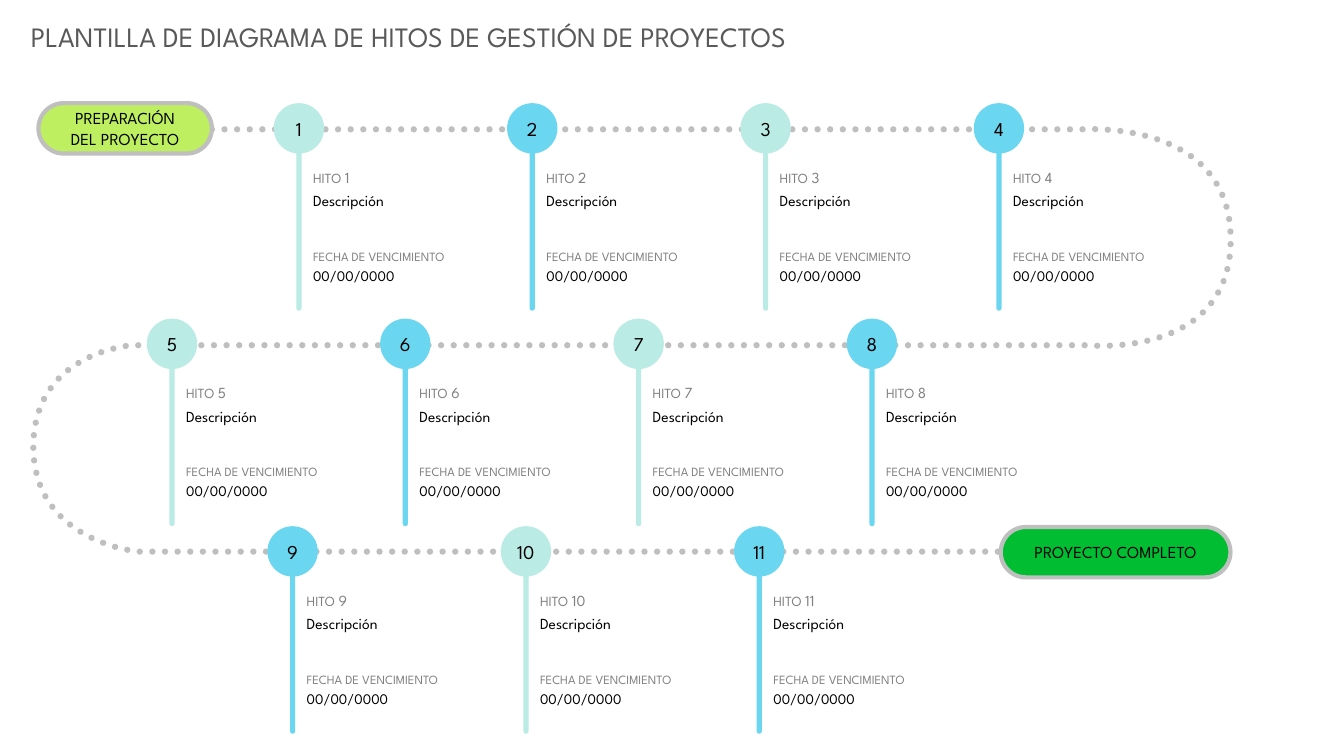
from collections import namedtuple
from dataclasses import dataclass

from pptx import Presentation
from pptx import util as u
from pptx.dml import color
from pptx.enum import dml, shapes, text
from pptx.oxml import ns

Box = namedtuple("Box", "left top width height")
Row = namedtuple("Row", "left top first count tints")


@dataclass(frozen=True)
class Theme:
    """Colours, font and type sizes of the slide."""

    font: str = "League Spartan"
    title: str = "595959"
    label: str = "808080"
    ink: str = "000000"
    track: str = "BFBFBF"
    aqua: str = "BBEBE5"
    blue: str = "6BD6F0"
    start: str = "BEEF60"
    finish: str = "00BD32"
    title_size: float = 20
    number_size: float = 14
    pill_size: float = 12
    body_size: float = 11
    date_size: float = 10.5
    name_size: float = 10
    due_size: float = 9


THEME = Theme()
PITCH = 5.88
DISC = 1.27
CURVE_STEPS = 24
ROWS = (
    Row(6.9, 2.6, 1, 4, (THEME.aqua, THEME.blue)),
    Row(3.7, 8.03, 5, 4, (THEME.aqua, THEME.blue)),
    Row(6.74, 13.26, 9, 3, (THEME.blue, THEME.aqua)),
)


def place(box):
    """Convert a box in centimetres to lengths."""
    return [u.Cm(value) for value in box]


def rgb(value):
    """Turn a hex value into a colour."""
    return color.RGBColor.from_string(value)


def write(shape, spans, inset=0, centred=False):
    """Write (text, size, colour) spans as one paragraph; a line feed breaks the line."""
    frame = shape.text_frame
    values = {"word_wrap": True, "margin_left": u.Cm(inset), "margin_right": u.Cm(inset),
              "margin_top": u.Cm(inset / 2), "margin_bottom": u.Cm(inset / 2),
              "vertical_anchor": text.MSO_ANCHOR.MIDDLE if centred else text.MSO_ANCHOR.TOP}
    for name, value in values.items():
        setattr(frame, name, value)
    para = frame.paragraphs[0]
    para.alignment = text.PP_ALIGN.CENTER if centred else text.PP_ALIGN.LEFT
    for words, size, tint in spans:
        for index, line in enumerate(words.split("\n")):
            if index:
                para.add_line_break()
            span = para.add_run()
            span.text = line
            for name, value in {"name": THEME.font, "size": u.Pt(size)}.items():
                setattr(span.font, name, value)
            span.font.color.rgb = rgb(tint)


def add_filled(parent, kind, box, tint):
    """Add a preset shape with a plain fill and no outline."""
    shape = parent.shapes.add_shape(kind, *place(box))
    shape.shadow.inherit = False
    shape.fill.solid()
    shape.fill.fore_color.rgb = rgb(tint)
    shape.line.fill.background()
    if kind == shapes.MSO_SHAPE.ROUNDED_RECTANGLE:
        shape.adjustments[0] = 0.5
    return shape


def add_title(page, box):
    """Place the slide title."""
    title = page.shapes.add_textbox(*place(box))
    write(title, [("PLANTILLA DE DIAGRAMA DE HITOS DE GESTIÓN DE PROYECTOS",
                   THEME.title_size, THEME.title)], inset=0.25)


def bend(start, first, second, end):
    """Sample a cubic curve into points."""
    points = []
    for step in range(1, CURVE_STEPS + 1):
        t = step / CURVE_STEPS
        weights = ((1 - t) ** 3, 3 * t * (1 - t) ** 2, 3 * t * t * (1 - t), t ** 3)
        corners = (start, first, second, end)
        points.append(tuple(sum(w * c[axis] for w, c in zip(weights, corners))
                            for axis in (0, 1)))
    return points


def add_track(page, box):
    """Draw the dotted winding track through the three rows."""
    right, middle, bottom = box.width, 5.44, box.height
    upper_turn, lower_turn = (26.42, 0), (26.54, middle)
    left_in, left_out = (2.49, middle), (2.64, bottom)
    east, west = (right, 2.77), (0, 8)
    points = [
        (4.5, 0), upper_turn,
        *bend(upper_turn, upper_turn, (right, -0.28), east),
        *bend(east, (right, 5.82), lower_turn, lower_turn),
        left_in,
        *bend(left_in, left_in, (0, 5.61), west),
        *bend(west, (0, 10.39), left_out, left_out),
        (25.27, bottom),
    ]
    spots = [(u.Cm(box.left + x), u.Cm(box.top + y)) for x, y in points]
    builder = page.shapes.build_freeform(*spots[0])
    builder.add_line_segments(spots[1:], close=False)
    track = builder.convert_to_shape()
    track.shadow.inherit = False
    track.fill.background()
    track.line.color.rgb = rgb(THEME.track)
    track.line.width = u.Pt(4.5)
    track.line.dash_style = dml.MSO_LINE.ROUND_DOT
    track._element.spPr.find(ns.qn("a:ln")).set("cap", "rnd")


def add_pill(page, box, words, tint):
    """Place an end stop of the track."""
    pill = add_filled(page, shapes.MSO_SHAPE.ROUNDED_RECTANGLE, box, tint)
    pill.line.color.rgb = rgb(THEME.track)
    pill.line.width = u.Pt(3)
    write(pill, [(words, THEME.pill_size, THEME.ink)], centred=True)


def add_milestone(page, box, number, tint):
    """Place a numbered disc, its stem and its four texts as a group."""
    group = page.shapes.add_group_shape()
    stem = Box(box.left + 0.57, box.top + 0.48, 0.13, box.height - 0.48)
    add_filled(group, shapes.MSO_SHAPE.ROUNDED_RECTANGLE, stem, tint)
    texts = (
        (1.63, 2.97, 0.66, [("HITO", THEME.name_size, THEME.label),
                            (" ", THEME.date_size, THEME.label),
                            (str(number), THEME.body_size, THEME.label)]),
        (2.22, 3.48, 1.45, [("Descripción", THEME.body_size, THEME.ink)]),
        (3.66, 4.45, 0.51, [("FECHA DE VENCIMIENTO", THEME.due_size, THEME.label)]),
        (4.12, 2.29, 0.66, [("00/00/0000", THEME.date_size, THEME.ink)]),
    )
    for drop, width, height, spans in texts:
        area = Box(box.left + 0.99, box.top + drop, width, height)
        write(group.shapes.add_textbox(*place(area)), spans)
    disc = add_filled(group, shapes.MSO_SHAPE.OVAL, Box(box.left, box.top, DISC, DISC), tint)
    write(disc, [(str(number), THEME.number_size, THEME.ink)], centred=True)


def add_row(page, row):
    """Place the milestones of one row at an equal pitch."""
    for index in range(row.count):
        box = Box(row.left + index * PITCH, row.top, PITCH, 5.23)
        add_milestone(page, box, row.first + index, row.tints[index % 2])


def main():
    """Build the milestone slide and save it."""
    deck = Presentation()
    deck.slide_width, deck.slide_height = u.Cm(33.87), u.Cm(19.05)
    page = deck.slides.add_slide(deck.slide_layouts[6])
    add_title(page, Box(0.53, 0.36, 22.63, 1.11))
    add_track(page, Box(0.84, 3.26, 30.18, 10.64))
    add_pill(page, Box(0.97, 2.6, 4.37, DISC), "PREPARACIÓN\nDEL PROYECTO", THEME.start)
    for row in ROWS:
        add_row(page, row)
    add_pill(page, Box(25.22, 13.28, 5.79, DISC), "PROYECTO COMPLETO", THEME.finish)
    deck.save("out.pptx")


if __name__ == "__main__":
    main()
